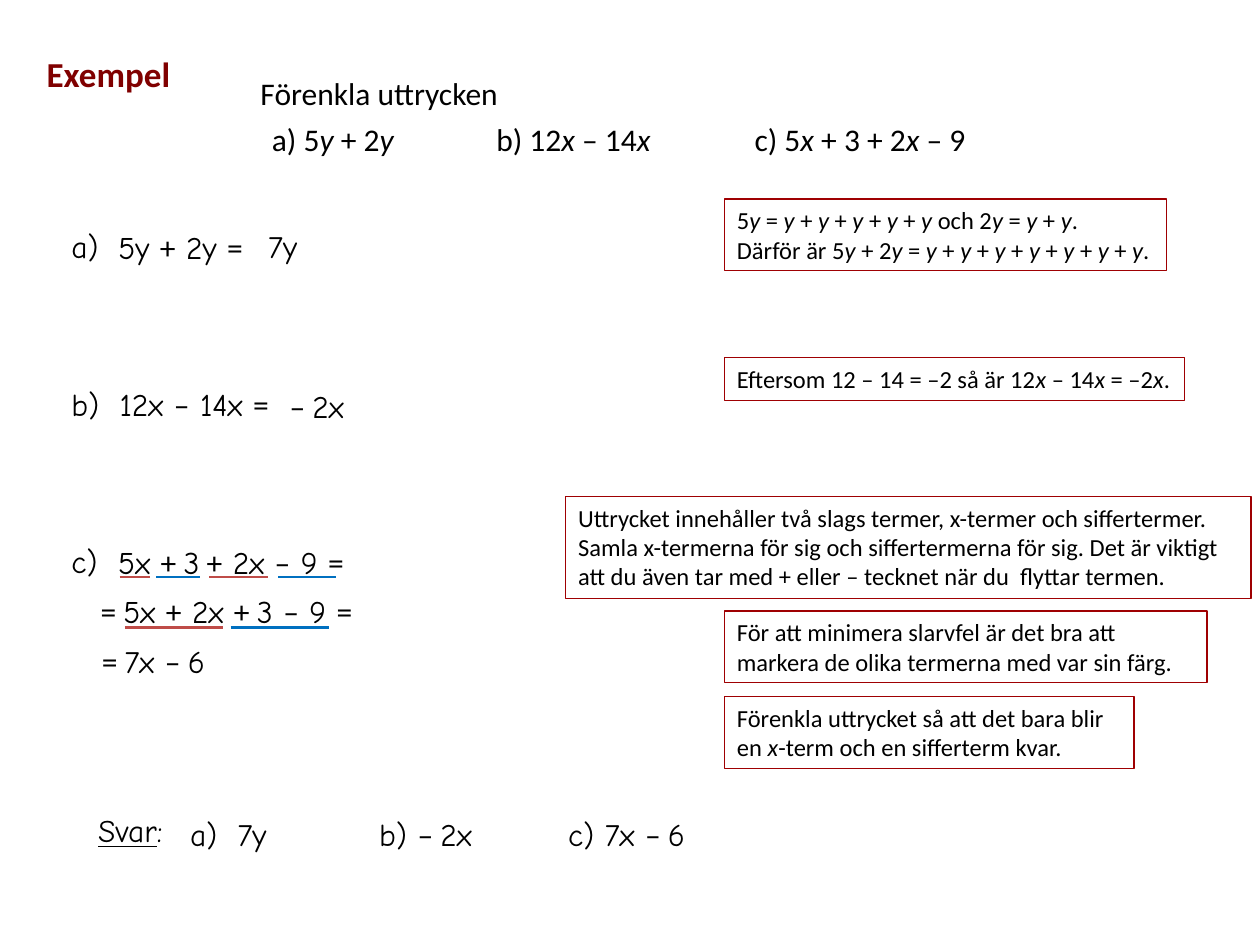
"""Build a worked example slide on simplifying algebraic expressions."""
from dataclasses import dataclass

from lxml.etree import SubElement
from pptx import Presentation
from pptx.dml.color import RGBColor as RGB
from pptx.enum.shapes import MSO_CONNECTOR as CONN, MSO_SHAPE as SHAPE
from pptx.enum.text import MSO_ANCHOR as ANCHOR, MSO_AUTO_SIZE as AUTO, PP_ALIGN as ALIGN
from pptx.oxml.ns import qn
from pptx.util import Pt


@dataclass(frozen=True)
class Theme:
    ink: RGB = RGB(0, 0, 0)
    head: RGB = RGB(0x80, 0, 0)
    edge: RGB = RGB(0x9F, 0, 0x02)
    red: RGB = RGB(0xBF, 0x4C, 0x48)
    blue: RGB = RGB(0, 0x70, 0xC0)
    print: str = "Calibri"
    hand: str = "Comic Neue"
    big: int = 20
    mid: int = 18
    small: int = 14


T = Theme()

TASKS = [
    (141.8, 38.9, 455.8, "Förenkla uttrycken"),
    (148.3, 64.8, 91.4, "a) 5*y* + 2*y*"),
    (276.5, 64.8, 111.6, "b) 12*x* – 14*x*"),
    (424.1, 64.8, 147.6, "c) 5*x* + 3 + 2*x* – 9"),
]
STEPS = [
    (33.8, 126, 36, "a)"),
    (60.5, 126.7, 97.2, "5y *+* 2y *=*"),
    (146.2, 126, 61.9, "7y"),
    (33.8, 216.7, 36, "b)"),
    (61.2, 216.7, 114.5, "12x *–* 14x *=*"),
    (158.4, 217.4, 61.9, "*– *2x"),
    (33.8, 306, 36, "c)"),
    (60.5, 306.7, 146.9, "5x *+ *3* +* 2x *–* 9 *=*"),
    (50.4, 334.8, 167.8, "*= *5x *+* 2x *+ *3 *–* 9 *=*"),
    (51.1, 363.6, 79.2, "*= *7x *– *6"),
]
NOTES = [
    (414, 113.8, 252.7, 41, "5*y* = *y* + *y* + *y *+ *y* + *y* och 2*y *= *y* + *y*.\n"
     "Därför är 5*y* + 2*y* = *y* + *y* + *y* + *y* + *y *+ *y* + *y*."),
    (414, 204.5, 262.8, 24.5, "Eftersom 12 – 14 = –2 så är 12*x* – 14*x* = –2*x*."),
    (323.3, 283.7, 391.7, 58.3,
     "Uttrycket innehåller två slags termer, x-termer och siffertermer.\n"
     "Samla x-termerna för sig och siffertermerna för sig. Det är viktigt\n"
     "att du även tar med + eller – tecknet när du  flyttar termen."),
    (414, 349.2, 275.8, 41,
     "För att minimera slarvfel är det bra att markera de olika termerna med var sin färg."),
    (414, 398.2, 234, 41,
     "Förenkla uttrycket så att det bara blir en *x*-term och en sifferterm kvar."),
]
MARKS = [
    (68.4, 85.7, 329.8, T.red), (119.5, 153.4, 329.8, T.red),
    (89.3, 114.5, 329.8, T.blue), (159.1, 192.2, 329.8, T.blue),
    (71.3, 127.4, 358.6, T.red), (131.8, 187.9, 358.6, T.blue),
]


def slant(font):
    """Make a run italic."""
    font.italic = True


def sign(font):
    """Set an operator in the print face."""
    font.name = T.print


def under(font):
    """Underline a run."""
    font.underline = True


def write(shape, text, face, size, alt=slant, tint=T.ink):
    """Fill a shape with text whose starred parts get the alternate style."""
    frame = shape.text_frame
    frame.word_wrap = True
    frame.auto_size = AUTO.SHAPE_TO_FIT_TEXT
    frame.vertical_anchor = ANCHOR.TOP
    frame.text = "\n".join("" for _ in text.split("\n"))
    for para, line in zip(frame.paragraphs, text.split("\n")):
        para.alignment = ALIGN.LEFT
        para.space_before = Pt(0)
        for i, part in enumerate(line.split("*")):
            if not part:
                continue
            run = para.add_run()
            run.text = part
            font = run.font
            font.name, font.size, font.color.rgb = face, Pt(size), tint
            if i % 2:
                alt(font)


def place(shape, x, y, w, h):
    """Move and size a placeholder."""
    shape.left, shape.top, shape.width, shape.height = map(Pt, (x, y, w, h))


def label(slide, x, y, w, text, face, alt):
    """Add one line of plain text."""
    box = slide.shapes.add_textbox(Pt(x), Pt(y), Pt(w), Pt(28.8))
    write(box, text, face, T.mid, alt)


def note(slide, x, y, w, h, text):
    """Add a framed remark."""
    box = slide.shapes.add_shape(SHAPE.RECTANGLE, Pt(x), Pt(y), Pt(w), Pt(h))
    box.shadow.inherit = False
    box.fill.background()
    box.line.color.rgb = T.edge
    box.line.width = Pt(0.75)
    write(box, text, T.print, T.small)


def mark(slide, left, right, y, tint):
    """Underline a term with a coloured line."""
    line = slide.shapes.add_connector(CONN.STRAIGHT, Pt(left), Pt(y), Pt(right), Pt(y))
    line.line.color.rgb = tint
    line.line.width = Pt(1.5)
    SubElement(line._element.spPr, qn("a:effectLst"))


def number(para):
    """Number a paragraph as a), b), c) with a hanging indent."""
    props = para._p.get_or_add_pPr()
    props.set("marL", str(Pt(27)))
    props.set("indent", str(-Pt(27)))
    SubElement(props, qn("a:buFont"), typeface=T.hand)
    SubElement(props, qn("a:buAutoNum"), type="alphaLcParenR")


def main():
    """Build and save the slide."""
    deck = Presentation()
    deck.slide_width, deck.slide_height = Pt(720), Pt(540)
    slide = deck.slides.add_slide(deck.slide_layouts[1])
    title, body = slide.placeholders
    place(title, 19.4, 26.6, 91.4, 31.7)
    write(title, "*Exempel*", T.print, T.big, lambda font: setattr(font, "bold", True), T.head)
    for task in TASKS:
        label(slide, *task, T.print, slant)
    for step in STEPS:
        label(slide, *step, T.hand, sign)
    for item in NOTES:
        note(slide, *item)
    for item in MARKS:
        mark(slide, *item)
    label(slide, 49, 460.1, 114.5, "*Svar*:", T.hand, under)
    place(body, 101.5, 462.2, 443.5, 28.8)
    write(body, "7y\t\tb) *– *2x\t\tc) 7x *– *6", T.hand, T.mid, sign)
    number(body.text_frame.paragraphs[0])
    deck.save("out.pptx")


if __name__ == "__main__":
    main()
